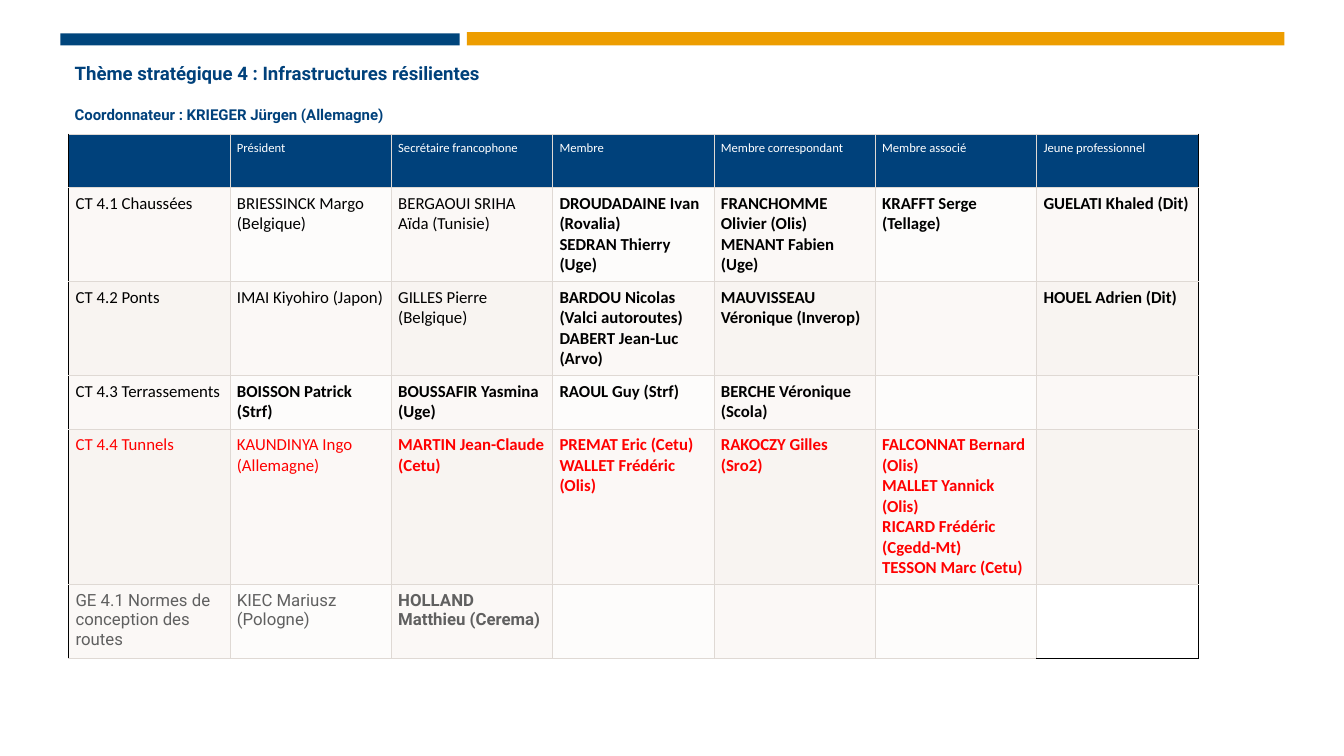
from dataclasses import dataclass

from lxml.etree import SubElement
from pptx import Presentation
from pptx.dml.color import RGBColor
from pptx.enum.shapes import MSO_SHAPE
from pptx.enum.text import MSO_ANCHOR, MSO_AUTO_SIZE, PP_ALIGN
from pptx.oxml.ns import qn
from pptx.slide import Slide
from pptx.table import _Cell
from pptx.text.text import _Paragraph
from pptx.util import Inches, Pt

NAVY, GRID, BLACK, RED, GREY = "00417B", "DFD9D4", "000000", "FF0000", "606060"
ROW_SHADES = (("F8F4F1", "FBF8F6"), ("FBF8F6", "FDFCFB"))
COLUMN_WIDTHS = (1.6,) * 6 + (1.61,)


@dataclass(frozen=True)
class Bar:
    left: float
    top: float
    width: float
    height: float
    color: str


@dataclass(frozen=True)
class Style:
    size: float
    font: str
    color: str


@dataclass(frozen=True)
class Committee:
    height: float
    style: Style
    first_bold: int
    cells: tuple[str, ...]


BARS = (
    Bar(0.6, 0.33, 3.96, 0.12, "00457C"),
    Bar(4.63, 0.32, 8.11, 0.13, "ED9D00"),
)
HEADING = Style(13.3, "Roboto", NAVY)
SUBHEADING = Style(10.7, "Roboto", NAVY)
HEADER = Style(9, "Calibri", "FFFFFF")
BODY = Style(12, "Calibri", BLACK)
TUNNELS = Style(12, "Calibri", RED)
STANDARDS = Style(12, "Roboto", GREY)

ROWS = (
    Committee(0.53, HEADER, 7, (
        "", "Président", "Secrétaire francophone", "Membre",
        "Membre correspondant", "Membre associé", "Jeune professionnel")),
    Committee(0.93, BODY, 3, (
        "CT 4.1 Chaussées", "BRIESSINCK Margo (Belgique)",
        "BERGAOUI SRIHA Aïda (Tunisie)",
        "DROUDADAINE Ivan (Rovalia)\nSEDRAN Thierry (Uge)",
        "FRANCHOMME Olivier (Olis)\nMENANT Fabien (Uge)",
        "KRAFFT Serge (Tellage)", "GUELATI Khaled (Dit)")),
    Committee(0.93, BODY, 3, (
        "CT 4.2 Ponts", "IMAI Kiyohiro (Japon)", "GILLES Pierre (Belgique)",
        "BARDOU Nicolas (Valci autoroutes)\nDABERT Jean-Luc (Arvo)",
        "MAUVISSEAU Véronique (Inverop)", "", "HOUEL Adrien (Dit)")),
    Committee(0.53, BODY, 1, (
        "CT 4.3 Terrassements", "BOISSON Patrick (Strf)",
        "BOUSSAFIR Yasmina (Uge)", "RAOUL Guy (Strf)",
        "BERCHE Véronique (Scola)", "", "")),
    Committee(1.53, TUNNELS, 2, (
        "CT 4.4 Tunnels", "KAUNDINYA Ingo (Allemagne)",
        "MARTIN Jean-Claude (Cetu)",
        "PREMAT Eric (Cetu)\nWALLET Frédéric (Olis)",
        "RAKOCZY Gilles (Sro2)",
        "FALCONNAT Bernard (Olis)\nMALLET Yannick (Olis)\n"
        "RICARD Frédéric (Cgedd-Mt)\nTESSON Marc (Cetu)", "")),
    Committee(0.73, STANDARDS, 2, (
        "GE 4.1 Normes de conception des routes", "KIEC Mariusz (Pologne)",
        "HOLLAND Matthieu (Cerema)", "", "", "", "")),
)


def rgb(color: str) -> RGBColor:
    """Turn a hex string into a colour."""
    return RGBColor.from_string(color)


def add_span(para: _Paragraph, text: str, style: Style, bold: bool) -> None:
    """Add one formatted run to a paragraph."""
    span = para.add_run()
    span.text = text
    span.font.size = Pt(style.size)
    span.font.name = style.font
    span.font.bold = bold
    span.font.color.rgb = rgb(style.color)


def add_bar(page: Slide, bar: Bar) -> None:
    """Draw one coloured bar above the title."""
    box = page.shapes.add_shape(
        MSO_SHAPE.RECTANGLE, Inches(bar.left), Inches(bar.top),
        Inches(bar.width), Inches(bar.height))
    box.shadow.inherit = False
    box.fill.solid()
    box.fill.fore_color.rgb = rgb(bar.color)
    box.line.fill.background()


def fill_title(page: Slide) -> None:
    """Place the theme and its coordinator in the title placeholder."""
    title = page.shapes.title
    title.left, title.top = Inches(0.61), Inches(0.13)
    title.width, title.height = Inches(4.52), Inches(1.39)
    frame = title.text_frame
    frame.word_wrap = True
    frame.auto_size = MSO_AUTO_SIZE.NONE
    frame.vertical_anchor = MSO_ANCHOR.TOP
    frame.margin_left = frame.margin_right = Inches(0.13)
    frame.margin_top, frame.margin_bottom = Inches(0.48), Inches(0.12)
    theme = frame.paragraphs[0]
    coordinator = frame.add_paragraph()
    coordinator.space_before = Pt(15.6)
    theme.alignment = coordinator.alignment = PP_ALIGN.LEFT
    add_span(theme, "Thème stratégique 4 : Infrastructures résilientes", HEADING, True)
    add_span(coordinator, "Coordonnateur : KRIEGER Jürgen (Allemagne)", SUBHEADING, True)


def set_borders(cell: _Cell, colors: dict[str, str]) -> None:
    """Give each side of a cell a half-point line."""
    properties = cell._tc.get_or_add_tcPr()
    for side, color in colors.items():
        line = SubElement(properties, qn(f"a:{side}"), w=str(Pt(0.5)))
        fill = SubElement(line, qn("a:solidFill"))
        SubElement(fill, qn("a:srgbClr"), val=color)


def fill_cell(cell: _Cell, row: int, column: int) -> None:
    """Write and format one table cell."""
    committee = ROWS[row]
    last_column = column == len(COLUMN_WIDTHS) - 1
    corner = last_column and row == len(ROWS) - 1
    set_borders(cell, {
        "lnL": BLACK if column == 0 else GRID,
        "lnR": BLACK if last_column else GRID,
        "lnT": GRID,
        "lnB": BLACK if corner else GRID,
    })
    if corner:
        cell.fill.background()
    else:
        cell.fill.solid()
        shade = ROW_SHADES[row % 2][column % 2] if row else NAVY
        cell.fill.fore_color.rgb = rgb(shade)
    cell.margin_left = cell.margin_right = Inches(0.07)
    cell.margin_top = cell.margin_bottom = Inches(0.06)
    text = committee.cells[column]
    frame = cell.text_frame
    for index, member in enumerate(text.split("\n") if text else ()):
        para = frame.add_paragraph() if index else frame.paragraphs[0]
        add_span(para, member, committee.style, column >= committee.first_bold)


def add_committees(page: Slide) -> None:
    """Draw the table of committees and members."""
    table = page.shapes.add_table(
        len(ROWS), len(COLUMN_WIDTHS), Inches(0.68), Inches(1.33),
        Inches(sum(COLUMN_WIDTHS)), Inches(sum(row.height for row in ROWS))).table
    table.first_row = table.horz_banding = False
    for column, width in enumerate(COLUMN_WIDTHS):
        table.columns[column].width = Inches(width)
    for row, committee in enumerate(ROWS):
        table.rows[row].height = Inches(committee.height)
        for column in range(len(COLUMN_WIDTHS)):
            fill_cell(table.cell(row, column), row, column)


def main() -> None:
    """Build the slide and save it."""
    deck = Presentation()
    deck.slide_width, deck.slide_height = Inches(13.33), Inches(7.5)
    page = deck.slides.add_slide(deck.slide_layouts[5])
    for bar in BARS:
        add_bar(page, bar)
    add_committees(page)
    fill_title(page)
    deck.save("out.pptx")


if __name__ == "__main__":
    main()
